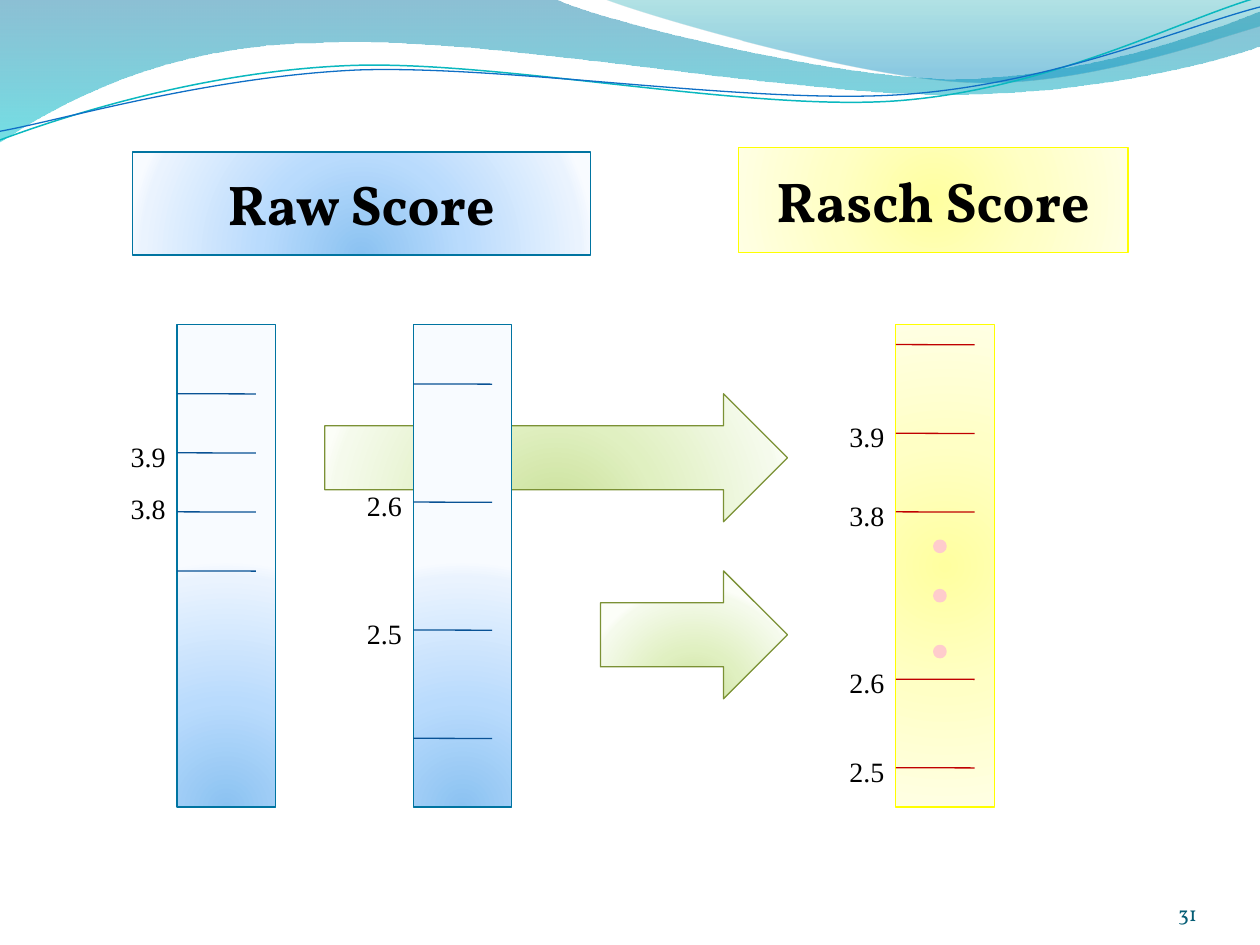
from lxml.etree import SubElement
from pptx import Presentation
from pptx.dml.color import RGBColor
from pptx.enum.shapes import MSO_CONNECTOR as Connector, MSO_SHAPE as Shape
from pptx.enum.text import MSO_ANCHOR as Anchor, PP_ALIGN as Align
from pptx.oxml.ns import qn
from pptx.util import Pt

BLACK = RGBColor(0, 0, 0)
TEAL = RGBColor(0x0A, 0xB8, 0xBF)
BLUE = RGBColor(0x0F, 0x6F, 0xC6)
BLUE_EDGE = RGBColor(0x00, 0x74, 0xA1)
GREEN_EDGE = RGBColor(0x7B, 0x91, 0x35)
YELLOW = RGBColor(0xFF, 0xFF, 0x00)
BLUE_TICK = RGBColor(0x09, 0x52, 0x95)
RED_TICK = RGBColor(0xC0, 0x00, 0x00)
PINK = RGBColor(0xFF, 0xCC, 0xCC)
NUMBER = RGBColor(0x04, 0x5D, 0x75)

BELOW, CENTRE = (50, 130, 50, -30), (50, 50, 50, 50)
BLUE_SKIN = ([(0, RGBColor(0x8B, 0xC2, 0xF1), 100), (43, RGBColor(0xB9, 0xDB, 0xFD), 100),
              (93, RGBColor(0xEA, 0xF3, 0xFE), 100), (100, RGBColor(0xF8, 0xFB, 0xFF), 100)],
             BELOW, BLUE_EDGE)
GREEN_SKIN = ([(0, RGBColor(0xC9, 0xDF, 0x97), 100), (43, RGBColor(0xE0, 0xF0, 0xC1), 100),
               (93, RGBColor(0xF5, 0xFA, 0xEC), 100), (100, RGBColor(0xFC, 0xFE, 0xF8), 100)],
              BELOW, GREEN_EDGE)
YELLOW_SKIN = ([(0, RGBColor(0xFF, 0xFF, 0xA0), 100), (50, RGBColor(0xFF, 0xFF, 0xC5), 100),
                (100, RGBColor(0xFF, 0xFF, 0xE3), 100)], CENTRE, YELLOW)
LOWER_WAVE = [(0, RGBColor(0x00, 0x74, 0xA1), 45), (100, RGBColor(0x00, 0xC6, 0xCF), 55)]
UPPER_WAVE = [(0, RGBColor(0x00, 0xA1, 0xA9), 30), (80, RGBColor(0x00, 0x8B, 0xBF), 45)]


def set_gradient(shape, stops, focus=None):
    """Fill a shape with a radial gradient around focus, or a vertical one."""
    shape.fill.background()
    properties = shape._element.spPr
    blank = properties.find(qn("a:noFill"))
    gradient = SubElement(properties, qn("a:gradFill"), rotWithShape="1")
    properties.replace(blank, gradient)
    stop_list = SubElement(gradient, qn("a:gsLst"))
    for position, color, opacity in stops:
        stop = SubElement(stop_list, qn("a:gs"), pos=str(position * 1000))
        tone = SubElement(stop, qn("a:srgbClr"), val=str(color))
        if opacity < 100:
            SubElement(tone, qn("a:alpha"), val=str(opacity * 1000))
    if focus:
        route = SubElement(gradient, qn("a:path"), path="circle")
        sides = {side: str(value * 1000) for side, value in zip("ltrb", focus)}
        SubElement(route, qn("a:fillToRect"), **sides)
    else:
        SubElement(gradient, qn("a:lin"), ang="5400000", scaled="1")


def add_curve(page, start, segments, close):
    """Add a freeform whose six-number segments are Bezier curves."""
    builder = page.shapes.build_freeform(*map(Pt, start), scale=1.0)
    for segment in segments:
        points = zip(map(Pt, segment[::2]), map(Pt, segment[1::2]))
        builder.add_line_segments(list(points), close=False)
    if close:
        builder.add_line_segments([], close=True)
    curve = builder.convert_to_shape()
    curve.shadow.inherit = False
    lines = iter(list(curve._element.spPr.iter(qn("a:lnTo"))))
    for segment in segments:
        first = next(lines)
        if len(segment) == 6:
            first.tag = qn("a:cubicBezTo")
            for line in (next(lines), next(lines)):
                first.append(line[0])
                line.getparent().remove(line)
    return curve


def add_waves(page):
    """Draw the filled waves and thin lines along the top edge."""
    lower = [(317, -0.7), (343, 12, 478, 45, 546, 45), (614, 45, 690, 19, 720, 6.5),
             (721, 26), (708, 32, 626, 55, 537, 54), (447, 54, 275, 20, 185, 24.5),
             (93, 25, 33, 60, -0.7, 81.4), (0, -0.7)]
    upper = [(366, 8, 491, 45, 554, 47), (616, 50, 692, 23, 720, 15), (720, 0), (345, -0.7)]
    for start, segments, stops in (((0, -0.7), lower, LOWER_WAVE),
                                   ((345, -0.7), upper, UPPER_WAVE)):
        wave = add_curve(page, start, segments, True)
        set_gradient(wave, stops)
        wave.line.fill.background()
    teal = [(35, 67, 114, 41, 199, 37.5), (284, 34, 427, 64, 513, 57.6),
            (600, 51, 675, 11, 718.6, -1.4)]
    blue = [(34, 69, 118, 44, 204, 40), (290, 37, 430, 60, 516, 54), (602, 48, 677, 15, 720, 4)]
    for start, segments, color, width in (((0, 80), teal, TEAL, 0.85),
                                          ((0, 75), blue, BLUE, 0.75)):
        strand = add_curve(page, start, segments, False)
        strand.fill.background()
        strand.line.color.rgb = color
        strand.line.width = Pt(width)


def add_panel(page, kind, box, skin):
    """Add a gradient shape with a thin edge."""
    stops, focus, edge = skin
    panel = page.shapes.add_shape(kind, *map(Pt, box))
    panel.shadow.inherit = False
    set_gradient(panel, stops, focus)
    panel.line.color.rgb = edge
    panel.line.width = Pt(0.75)
    return panel


def set_text(shape, text, font, size, color, align, bold=False):
    """Put one formatted line of text into a shape."""
    shape.text_frame.text = text
    para = shape.text_frame.paragraphs[0]
    para.alignment = align
    style = para.runs[0].font
    style.name, style.size, style.bold = font, Pt(size), bold
    style.color.rgb = color


def add_heading(page, box, text, skin):
    """Add a boxed heading above its scales."""
    heading = add_panel(page, Shape.RECTANGLE, box, skin)
    heading.text_frame.vertical_anchor = Anchor.MIDDLE
    set_text(heading, text, "Vollkorn", 32, BLACK, Align.CENTER, True)


def add_scale(page, box, skin, tick_color, ticks, labels, dots=()):
    """Draw a vertical scale with ticks, labels on its left and dots."""
    left, top = box[:2]
    add_panel(page, Shape.RECTANGLE, box, skin)
    for offset in ticks:
        y = top + offset
        tick = page.shapes.add_connector(Connector.STRAIGHT, Pt(left), Pt(y),
                                         Pt(left + 45), Pt(y + 0.12))
        SubElement(tick._element.spPr, qn("a:effectLst"))
        tick.line.color.rgb = tick_color
        tick.line.width = Pt(0.75)
    for text, offset in labels:
        label = page.shapes.add_textbox(Pt(left - 33.6), Pt(top + offset), Pt(45), Pt(26.6))
        label.text_frame.word_wrap = True
        set_text(label, text, "Times New Roman", 16, BLACK, Align.LEFT)
    for offset in dots:
        dot = page.shapes.add_shape(Shape.OVAL, Pt(left + 22.3), Pt(top + offset),
                                    Pt(5.8), Pt(5.8))
        dot.shadow.inherit = False
        dot.fill.solid()
        dot.fill.fore_color.rgb = PINK
        dot.line.color.rgb = PINK
        dot.line.width = Pt(2)


def add_page_number(page, box, text):
    """Write the page number in the lower right corner."""
    number = page.shapes.add_textbox(*map(Pt, box))
    frame = number.text_frame
    frame.margin_left = frame.margin_right = frame.margin_top = frame.margin_bottom = 0
    frame.word_wrap = True
    frame.vertical_anchor = Anchor.BOTTOM
    set_text(number, text, "Vollkorn", 12, NUMBER, Align.RIGHT)


def main():
    """Build the score comparison slide."""
    deck = Presentation()
    deck.slide_width, deck.slide_height = Pt(720), Pt(540)
    page = deck.slides.add_slide(deck.slide_layouts[6])
    add_waves(page)
    add_panel(page, Shape.RIGHT_ARROW, (185.6, 225, 264.4, 73.1), GREEN_SKIN)
    add_page_number(page, (624, 500.4, 60, 28.8), "31")
    top, width, height = 185.6, 56.2, 275.6
    add_scale(page, (101.2, top, width, height), BLUE_SKIN, BLUE_TICK,
              [39.4 + 33.75 * step for step in range(4)], [("3.9", 62), ("3.8", 91.8)])
    add_scale(page, (236.2, top, width, height), BLUE_SKIN, BLUE_TICK,
              [33.8, 101.3, 174.4, 236.3], [("2.6", 90), ("2.5", 163)])
    add_panel(page, Shape.RIGHT_ARROW, (343.1, 326.2, 106.9, 73.1), GREEN_SKIN)
    add_scale(page, (511.9, top, width, height), YELLOW_SKIN, RED_TICK,
              [11.3, 62, 106.9, 202.5, 253.1],
              [("3.9", 50.6), ("3.8", 95.8), ("2.6", 191), ("2.5", 242)],
              [123.7, 151.9, 183.8])
    add_heading(page, (75.6, 86.8, 261.7, 59), "Raw Score", BLUE_SKIN)
    add_heading(page, (422, 84.4, 222.6, 60), "Rasch Score", YELLOW_SKIN)
    deck.save("out.pptx")


if __name__ == "__main__":
    main()
